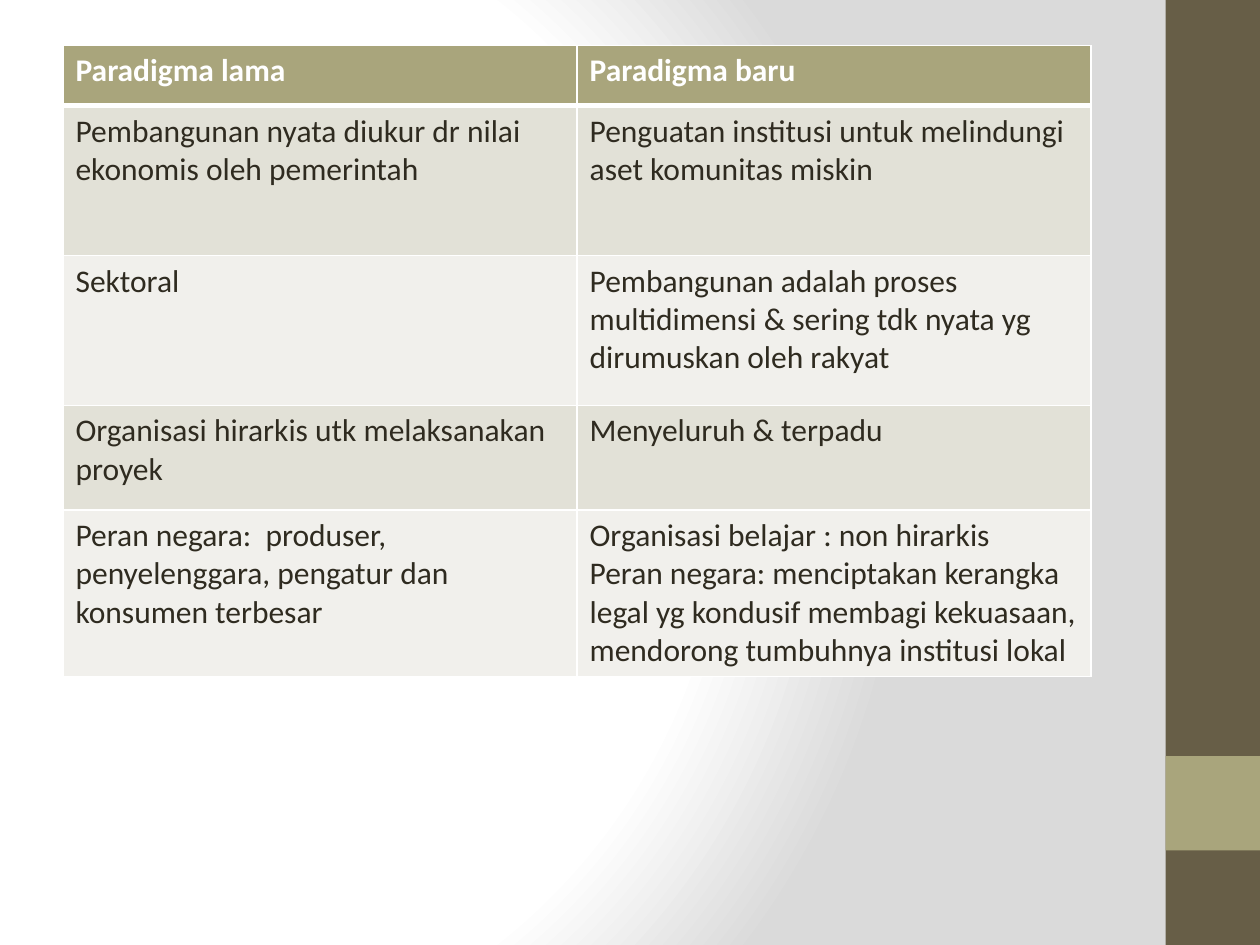
from lxml import etree
from pptx import Presentation, util as u
from pptx.dml.color import RGBColor
from pptx.enum import shapes
from pptx.oxml import ns, parse_xml

# Content: header first, then one pair per row
ROWS = [
    ("Paradigma lama", "Paradigma baru"),
    ("Pembangunan nyata diukur dr nilai ekonomis oleh pemerintah",
     "Penguatan institusi untuk melindungi aset komunitas miskin"),
    ("Sektoral",
     "Pembangunan adalah proses multidimensi & sering tdk nyata yg "
     "dirumuskan oleh rakyat"),
    ("Organisasi hirarkis utk melaksanakan proyek", "Menyeluruh & terpadu"),
    ("Peran negara:  produser, penyelenggara, pengatur dan konsumen terbesar",
     "Organisasi belajar : non hirarkis\n"
     "Peran negara: menciptakan kerangka legal yg kondusif membagi "
     "kekuasaan, mendorong tumbuhnya institusi lokal"),
]
HIGHS = [0.48, 1.19, 1.19, 0.83, 1.19]
WIDE = 4.08

THEME = {
    "font": "Calibri", "size": 18,
    "bar": "675E47", "accent": "A9A57C",
    "head": "FFFFFF", "body": "2F2B20",
    "bands": ("E2E1D7", "F1F0EC"), "rule": "FFFFFF",
    "glow": ((0, "FFFFFF"), (75, "FFFFFF"), (100, "DADADA")),
}


def color(name):
    return RGBColor.from_string(name)


def paint_back(slide):
    """Circular gradient behind the whole slide."""
    slide.background.fill.gradient()
    old = slide.element.find(".//" + ns.qn("a:gradFill"))
    stops = "".join(
        f'<a:gs pos="{pos * 1000}"><a:srgbClr val="{tone}"/></a:gs>'
        for pos, tone in THEME["glow"])
    new = parse_xml(
        f'<a:gradFill {ns.nsdecls("a")} rotWithShape="1">'
        f'<a:gsLst>{stops}</a:gsLst><a:path path="circle">'
        '<a:fillToRect l="20000" t="50000" r="100000" b="50000"/>'
        '</a:path></a:gradFill>')
    old.getparent().replace(old, new)


def add_block(slide, top, high, tone):
    """Plain block in the right-hand strip."""
    box = slide.shapes.add_shape(
        shapes.MSO_SHAPE.RECTANGLE, u.Inches(9.25), u.Inches(top),
        u.Inches(0.75), u.Inches(high))
    box.shadow.inherit = False
    box.fill.solid()
    box.fill.fore_color.rgb = color(tone)
    box.line.fill.background()


def add_rules(cell, widths):
    """Cell borders; widths in points by side."""
    props = cell._tc.get_or_add_tcPr()
    for spot, side in enumerate("LRTB"):
        line = etree.Element(ns.qn("a:ln" + side), w=str(u.Pt(widths[side])))
        fill = etree.SubElement(line, ns.qn("a:solidFill"))
        etree.SubElement(fill, ns.qn("a:srgbClr"), val=THEME["rule"])
        props.insert(spot, line)


def fill_cell(cell, words, row):
    head = row == 0
    cell.fill.solid()
    cell.fill.fore_color.rgb = color(
        THEME["accent"] if head else THEME["bands"][(row - 1) % 2])
    cell.text_frame.text = words
    for para in cell.text_frame.paragraphs:
        for run in para.runs:
            run.font.name = THEME["font"]
            run.font.size = u.Pt(THEME["size"])
            run.font.bold = head
            run.font.color.rgb = color(THEME["head" if head else "body"])
    add_rules(cell, {"L": 1, "R": 1, "T": 3 if row == 1 else 1,
                     "B": 3 if head else 1})


def add_grid(slide):
    cols = len(ROWS[0])
    grid = slide.shapes.add_table(
        len(ROWS), cols, u.Inches(0.5), u.Inches(0.36),
        u.Inches(WIDE * cols), u.Inches(sum(HIGHS))).table
    for col in grid.columns:
        col.width = u.Inches(WIDE)
    for row, (pair, high) in enumerate(zip(ROWS, HIGHS)):
        grid.rows[row].height = u.Inches(high)
        for col, words in enumerate(pair):
            fill_cell(grid.cell(row, col), words, row)


def main():
    deck = Presentation()
    deck.slide_width, deck.slide_height = u.Inches(10), u.Inches(7.5)
    slide = deck.slides.add_slide(deck.slide_layouts[6])
    paint_back(slide)
    # Side strip with its accent square
    add_block(slide, 0, 7.5, THEME["bar"])
    add_block(slide, 6, 0.75, THEME["accent"])
    # Comparison table
    add_grid(slide)
    deck.save("out.pptx")


if __name__ == "__main__":
    main()
